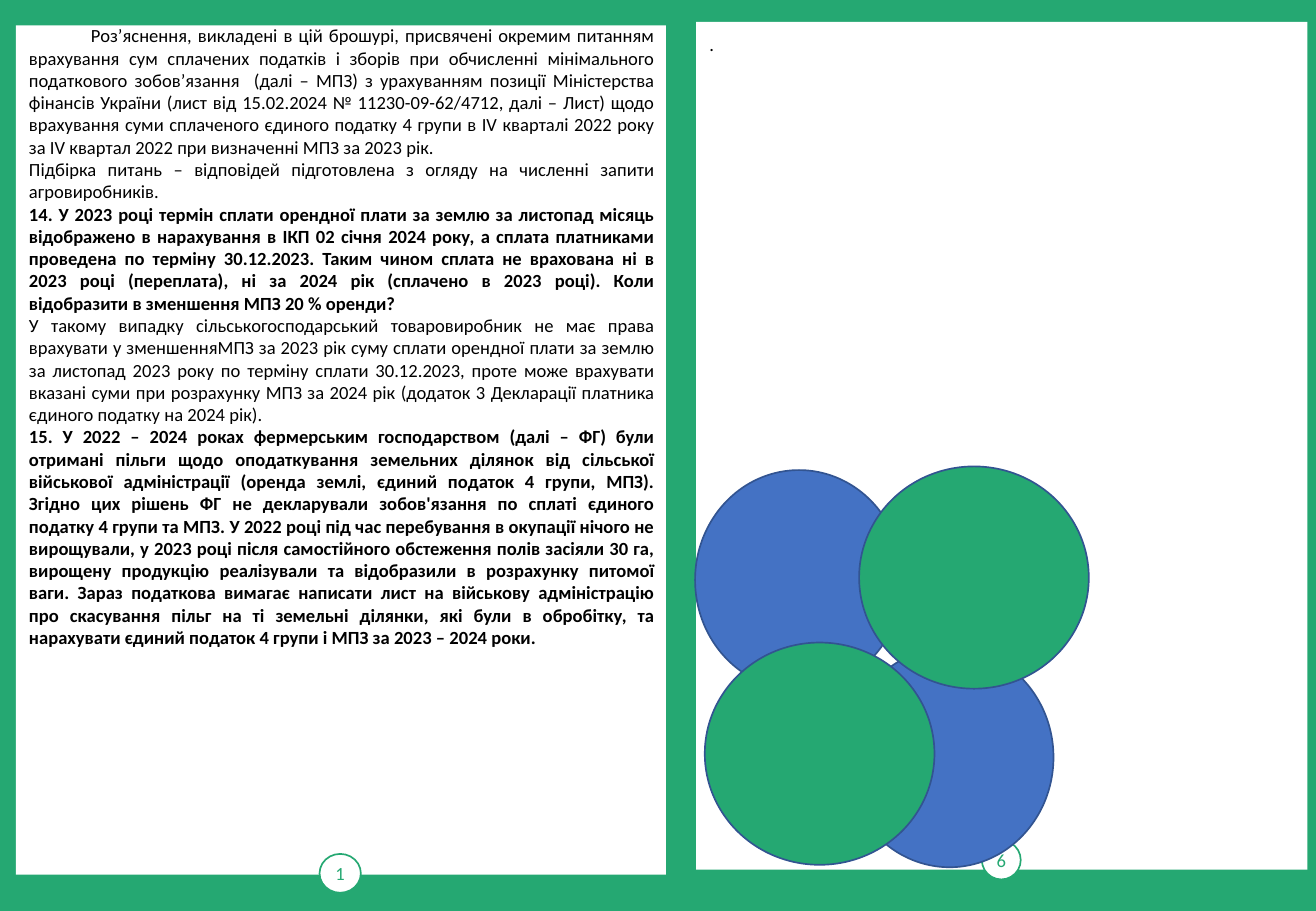
from pptx import Presentation
from pptx.dml.color import RGBColor
from pptx.enum import shapes, text
from pptx.util import Inches, Pt

GREEN, BLUE, OUTLINE, WHITE, BLACK = "25A872", "4472C4", "325491", "FFFFFF", "000000"
KIND = shapes.MSO_SHAPE


def paint(target, colour):
    """Give a fill or a font one solid colour."""
    if hasattr(target, "solid"):
        target.solid()
        target.fore_color.rgb = RGBColor.from_string(colour)
    else:
        target.color.rgb = RGBColor.from_string(colour)


def add_figure(kind, place, fill, line=None):
    figure = page.shapes.add_shape(kind, *map(Inches, place))
    figure.shadow.inherit = False
    paint(figure.fill, fill)
    if line:
        paint(figure.line.fill, line)
        figure.line.width = Pt(1)
    else:
        figure.line.fill.background()
    return figure


deck = Presentation()
deck.slide_width, deck.slide_height = Inches(10.83), Inches(7.5)
page = deck.slides.add_slide(deck.slide_layouts[6])
paint(page.background.fill, GREEN)

# White brochure sheets with their page numbers
sheets = [
    ((0.13, 0.21, 5.35, 6.99), (2.63, 7.03, 0.34, 0.32), "1"),
    ((5.73, 0.18, 5.03, 6.98), (8.08, 6.92, 0.32, 0.32), "6"),
]
for sheet_place, badge_place, number in sheets:
    add_figure(KIND.RECTANGLE, sheet_place, WHITE)
    badge = add_figure(KIND.OVAL, badge_place, WHITE, GREEN)
    frame = badge.text_frame
    margins = dict.fromkeys(["margin_left", "margin_right", "margin_top", "margin_bottom"], 0)
    for name, value in {**margins, "vertical_anchor": text.MSO_ANCHOR.MIDDLE}.items():
        setattr(frame, name, value)
    para = frame.paragraphs[0]
    para.alignment = text.PP_ALIGN.CENTER
    span = para.add_run()
    span.text = number
    for name, value in {"name": "Calibri", "size": Pt(11)}.items():
        setattr(span.font, name, value)
    paint(span.font, GREEN)

# Body text: (wording, bold, first line indent)
answers = [
    ("Роз’яснення, викладені в цій брошурі, присвячені окремим питанням врахування сум сплачених "
     "податків і зборів при обчисленні мінімального податкового зобов’язання  (далі – МПЗ) з "
     "урахуванням позиції Міністерства фінансів України (лист від 15.02.2024 № 11230-09-62/4712, "
     "далі – Лист) щодо врахування суми сплаченого єдиного податку 4 групи в ІV кварталі 2022 року "
     "за ІV квартал 2022 при визначенні МПЗ за 2023 рік.", False, 0.51),
    ("Підбірка питань – відповідей підготовлена з огляду на численні запити агровиробників.",
     False, 0),
    ("14. У 2023 році термін сплати орендної плати за землю за листопад місяць відображено в "
     "нарахування в ІКП 02 січня 2024 року, а сплата платниками проведена по терміну 30.12.2023. "
     "Таким чином сплата не врахована ні в 2023 році (переплата), ні за 2024 рік (сплачено в 2023 "
     "році). Коли відобразити в зменшення МПЗ 20 % оренди?", True, 0),
    ("У такому випадку сільськогосподарський товаровиробник не має права врахувати у "
     "зменшенняМПЗ за 2023 рік суму сплати орендної плати за землю за листопад 2023 року по "
     "терміну сплати 30.12.2023, проте може врахувати вказані суми при розрахунку МПЗ за 2024 рік "
     "(додаток 3 Декларації платника єдиного податку на 2024 рік).", False, 0),
    ("15. У 2022 – 2024 роках фермерським господарством (далі – ФГ) були отримані пільги щодо "
     "оподаткування земельних ділянок від сільської військової адміністрації (оренда землі, єдиний "
     "податок 4 групи, МПЗ). Згідно цих рішень ФГ не декларували зобов'язання по сплаті єдиного "
     "податку 4 групи та МПЗ. У 2022 році під час перебування в окупації нічого не вирощували, у "
     "2023 році після самостійного обстеження полів засіяли 30 га, вирощену продукцію реалізували "
     "та відобразили в розрахунку питомої ваги. Зараз податкова вимагає написати лист на військову "
     "адміністрацію про скасування пільг на ті земельні ділянки, які були в обробітку, та "
     "нарахувати єдиний податок 4 групи і МПЗ за 2023 – 2024 роки.", True, 0),
]
columns = [
    ((0.14, 0.15, 5.35, 7.32), answers),
    ((5.74, 0.22, 4.9, 0.29), [(".", False, 0)]),
]
for place, passages in columns:
    frame = page.shapes.add_textbox(*map(Inches, place)).text_frame
    frame.word_wrap = True
    frame.auto_size = text.MSO_AUTO_SIZE.SHAPE_TO_FIT_TEXT
    for index, (wording, bold, indent) in enumerate(passages):
        para = frame.add_paragraph() if index else frame.paragraphs[0]
        para.alignment = text.PP_ALIGN.JUSTIFY
        if indent:
            para._p.get_or_add_pPr().set("indent", str(Inches(indent)))
        span = para.add_run()
        span.text = wording
        for name, value in {"name": "Calibri", "size": Pt(11), "bold": bold}.items():
            setattr(span.font, name, value)
        paint(span.font, BLACK)

# Overlapping circles, blue behind green
circles = [
    ((5.72, 3.87, 1.71, 1.81), BLUE),
    ((6.96, 5.33, 1.71, 1.81), BLUE),
    ((5.8, 5.29, 1.89, 1.83), GREEN),
    ((7.07, 3.84, 1.89, 1.83), GREEN),
]
for place, colour in circles:
    add_figure(KIND.FLOWCHART_CONNECTOR, place, colour, OUTLINE)

deck.save("out.pptx")
